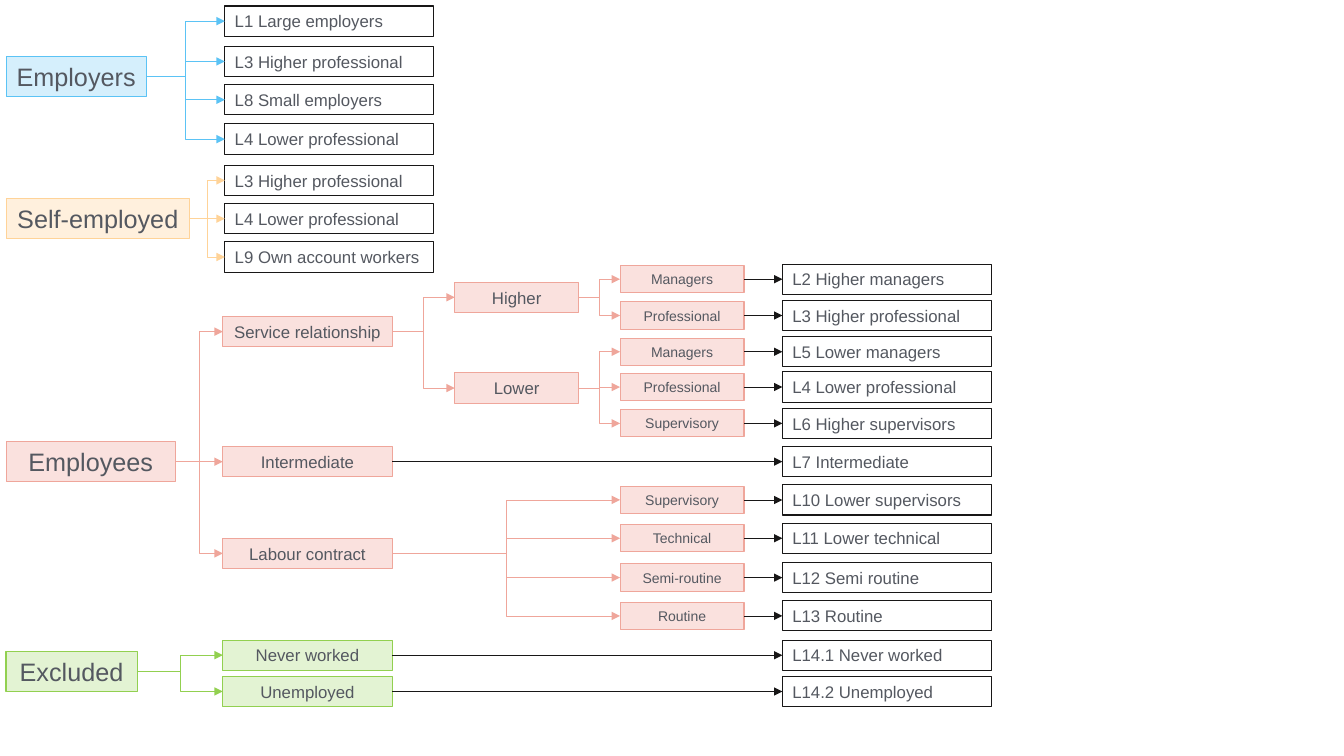
"""Draw a tree that sorts employment positions into the L1 to L14 classes."""
from lxml.etree import SubElement
from pptx import Presentation
from pptx.dml.color import RGBColor
from pptx.enum.shapes import MSO_CONNECTOR, MSO_SHAPE
from pptx.enum.text import MSO_ANCHOR, PP_ALIGN
from pptx.oxml.ns import qn
from pptx.util import Inches, Pt


def paint(color_format, hex_color, opacity=100):
    """Set a colour and, below 100 percent, its opacity."""
    color_format.rgb = RGBColor.from_string(hex_color)
    if opacity < 100:
        color = color_format._xFill.find(qn("a:srgbClr"))
        SubElement(color, qn("a:alpha"), val=str(opacity * 1000))


INK, TEXT = "181717", "545860"
COLUMNS = {
    "root": (0.06, None, 0.4, 18),
    "group": (2.21, 1.68, 0.3, 12),
    "class": (2.23, 2.07, 0.3, 12),
    "tier": (4.51, 1.23, 0.3, 12),
    "role": (6.15, 1.23, 0.27, 10),
    "result": (7.76, 2.07, 0.3, 12),
}
BRANCHES = [
    ("5BC3F5", "5BC3F5", 25, 1.39, [
        ("root", 0.76, "Employers"),
        ("class", 0.21, "L1 Large employers"),
        ("class", 0.61, "L3 Higher professional"),
        ("class", 0.99, "L8 Small employers"),
        ("class", 1.38, "L4 Lower professional"),
    ]),
    ("FFD398", "FFF0DD", 100, 1.82, [
        ("root", 2.17, "Self-employed"),
        ("class", 1.79, "L3 Higher professional"),
        ("class", 2.17, "L4 Lower professional"),
        ("class", 2.55, "L9 Own account workers"),
    ]),
    ("EFA69B", "FAE1DE", 100, 1.68, [
        ("root", 4.58, "Employees"),
        ("group", 3.29, "Service relationship"),
        ("tier", 2.95, "Higher"),
        ("role", 2.77, "Managers"),
        ("result", 2.77, "L2 Higher managers"),
        ("role", 3.13, "Professional"),
        ("result", 3.13, "L3 Higher professional"),
        ("tier", 3.85, "Lower"),
        ("role", 3.49, "Managers"),
        ("result", 3.49, "L5 Lower managers"),
        ("role", 3.84, "Professional"),
        ("result", 3.84, "L4 Lower professional"),
        ("role", 4.2, "Supervisory"),
        ("result", 4.2, "L6 Higher supervisors"),
        ("group", 4.58, "Intermediate"),
        ("result", 4.58, "L7 Intermediate"),
        ("group", 5.49, "Labour contract"),
        ("role", 4.96, "Supervisory"),
        ("result", 4.96, "L10 Lower supervisors"),
        ("role", 5.34, "Technical"),
        ("result", 5.34, "L11 Lower technical"),
        ("role", 5.73, "Semi-routine"),
        ("result", 5.73, "L12 Semi routine"),
        ("role", 6.11, "Routine"),
        ("result", 6.11, "L13 Routine"),
    ]),
    ("92D050", "92D050", 25, 1.3, [
        ("root", 6.66, "Excluded"),
        ("group", 6.5, "Never worked"),
        ("result", 6.5, "L14.1 Never worked"),
        ("group", 6.86, "Unemployed"),
        ("result", 6.86, "L14.2 Unemployed"),
    ]),
]

deck = Presentation()
deck.slide_width, deck.slide_height = Inches(13.33), Inches(7.5)
page = deck.slides.add_slide(deck.slide_layouts[6])

for line_color, fill_color, opacity, root_width, nodes in BRANCHES:
    ancestors = []
    for column, center, label in nodes:
        left, width, height, size = COLUMNS[column]
        is_class = column in ("class", "result")
        box = page.shapes.add_shape(
            MSO_SHAPE.RECTANGLE, Inches(left), Inches(center - height / 2),
            Inches(width or root_width), Inches(height))
        box.shadow.inherit = False
        box.line.width = Pt(0.75)
        paint(box.line.color, INK if is_class else line_color)
        if is_class:
            box.fill.background()
        else:
            box.fill.solid()
            paint(box.fill.fore_color, fill_color, opacity)

        frame_format = {
            "word_wrap": True,
            "vertical_anchor": MSO_ANCHOR.MIDDLE,
            "margin_left": Inches(0.1 if is_class else 0.05),
            "margin_right": Inches(0.05),
            "margin_top": 0,
            "margin_bottom": 0,
        }
        for name, value in frame_format.items():
            setattr(box.text_frame, name, value)
        para = box.text_frame.paragraphs[0]
        para.alignment = PP_ALIGN.LEFT if is_class else PP_ALIGN.CENTER
        span = para.add_run()
        span.text = label
        for name, value in {"name": "Arial", "size": Pt(size)}.items():
            setattr(span.font, name, value)
        paint(span.font.color, TEXT)

        while ancestors and ancestors[-1][0].left >= box.left:
            ancestors.pop()
        if ancestors:
            parent, parent_center = ancestors[-1]
            level = parent_center == center
            arrow = page.shapes.add_connector(
                MSO_CONNECTOR.STRAIGHT if level else MSO_CONNECTOR.ELBOW,
                parent.left + parent.width, Inches(parent_center),
                box.left, Inches(center))
            arrow.begin_connect(parent, 3)
            arrow.end_connect(box, 1)
            arrow.line.width = Pt(0.5)
            paint(arrow.line.color, INK if column == "result" else line_color)
            SubElement(arrow.line._get_or_add_ln(), qn("a:tailEnd"), type="triangle")
            SubElement(arrow._element.spPr, qn("a:effectLst"))
        ancestors.append((box, center))

deck.save("out.pptx")
